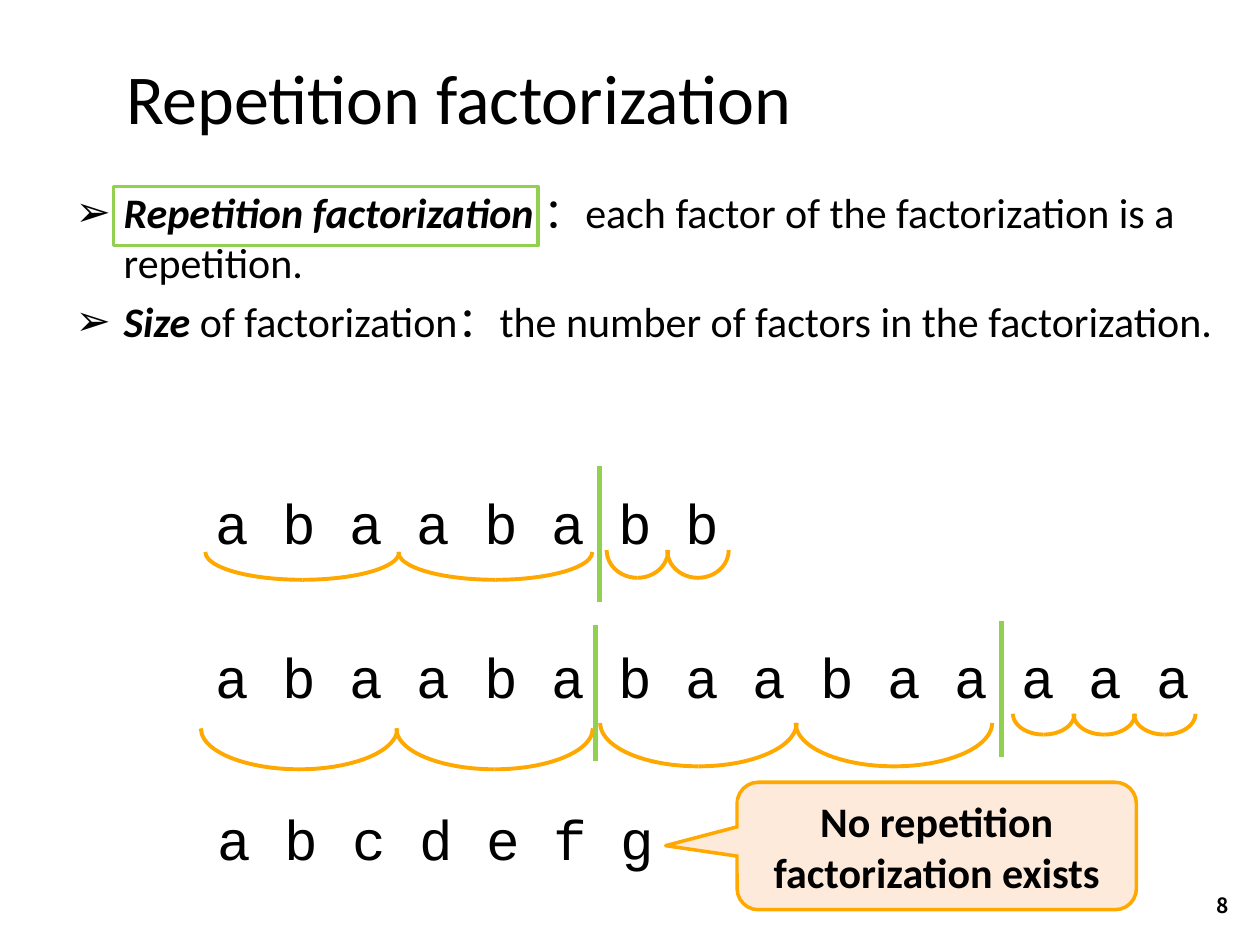
from collections import namedtuple

from lxml.etree import SubElement
from pptx import Presentation
from pptx.dml.color import RGBColor
from pptx.enum.shapes import MSO_CONNECTOR as Connector, MSO_SHAPE as Shape
from pptx.enum.text import MSO_ANCHOR as Anchor, MSO_AUTO_SIZE as AutoSize, PP_ALIGN as Align
from pptx.oxml.ns import qn
from pptx.util import Cm, Pt

COLORS = {"text": "000000", "cut": "92D050", "arc": "FFA900", "callout": "FDEADA"}
Box = namedtuple("Box", "left top width height")


def color(key):
    """Return the palette colour with the given key."""
    return RGBColor.from_string(COLORS[key])


def inside(box, left, top, width, height):
    """Return a box whose position is relative to another box."""
    return Box(box.left + left, box.top + top, width, height)


def place(shape, box):
    """Move and size a shape to a box in centimetres."""
    shape.left, shape.top, shape.width, shape.height = map(Cm, box)


def add_run(paragraph, text, size, font="Calibri", bold=False, italic=False):
    """Append a formatted run to a paragraph."""
    run = paragraph.add_run()
    run.text = text
    run.font.name, run.font.size = font, Pt(size)
    run.font.bold, run.font.italic = bold, italic
    run.font.color.rgb = color("text")


def add_form(shapes, kind, box, fill=None, line=None, weight=2):
    """Add a preset shape with an optional fill and outline."""
    form = shapes.add_shape(kind, *map(Cm, box))
    form.shadow.inherit = False
    if fill:
        form.fill.solid()
        form.fill.fore_color.rgb = color(fill)
    else:
        form.fill.background()
    if line:
        form.line.color.rgb = color(line)
        form.line.width = Pt(weight)
    else:
        form.line.fill.background()
    return form


def add_title(slide, box, text):
    """Fill the title placeholder."""
    title = slide.shapes.title
    place(title, box)
    title.text_frame.vertical_anchor = Anchor.MIDDLE
    heading = title.text_frame.paragraphs[0]
    heading.alignment = Align.LEFT
    add_run(heading, text, 40)


def add_definitions(slide, box, definitions):
    """Fill the body placeholder with terms and meanings and frame the first term."""
    body = slide.placeholders[1]
    place(body, box)
    frame = body.text_frame
    frame.auto_size = AutoSize.NONE
    for index, (term, meaning) in enumerate(definitions):
        item = frame.add_paragraph() if index else frame.paragraphs[0]
        properties = item._p.get_or_add_pPr()
        properties.set("marL", str(Cm(0.97)))
        properties.set("indent", str(-Cm(0.97)))
        SubElement(properties, qn("a:buChar"), char="➢")
        item.space_before = Pt(5 if index else 0)
        add_run(item, term, 24, bold=True, italic=True)
        add_run(item, meaning, 24)
    add_form(slide.shapes, Shape.RECTANGLE, inside(box, 1.02, 0.13, 8.56, 1.19), line="cut")


def add_cut(slide, left, top, length=2.74):
    """Draw a vertical line between two factor groups."""
    cut = slide.shapes.add_connector(
        Connector.STRAIGHT, Cm(left), Cm(top), Cm(left), Cm(top + length))
    cut.line.color.rgb = color("cut")
    cut.line.width = Pt(3)
    SubElement(cut._element.spPr, qn("a:effectLst"))


def add_arcs(slide, box, count):
    """Draw adjoining lower half ellipses, the first one filling the box."""
    group = slide.shapes.add_group_shape()
    for index in range(count):
        center_x = box.left + box.width / 2 + index * (box.width - 0.02)
        center_y = box.top + box.height / 2
        upright = Box(center_x - box.height / 2, center_y - box.width / 2,
                      box.height, box.width)
        for flipped in (False, True):
            arc = add_form(group.shapes, Shape.ARC, upright, line="arc", weight=2.25)
            arc.rotation = 90
            if flipped:
                arc._element.spPr.xfrm.set("flipV", "1")


def add_string(slide, box, letters, cuts=(), arcs=()):
    """Write a string with its cuts and repetition arcs."""
    string = slide.shapes.add_textbox(*map(Cm, box))
    string.text_frame.word_wrap = True
    string.text_frame.auto_size = AutoSize.SHAPE_TO_FIT_TEXT
    add_run(string.text_frame.paragraphs[0], letters, 32, "Courier New")
    for left, top in cuts:
        add_cut(slide, box.left + left, box.top + top)
    for *area, count in arcs:
        add_arcs(slide, inside(box, *area), count)


def add_callout(slide, box, text):
    """Draw a rounded callout with a pointer to its left."""
    bubble = add_form(slide.shapes, Shape.ROUNDED_RECTANGLE, box, "callout", "arc")
    bubble.text_frame.word_wrap = True
    bubble.text_frame.vertical_anchor = Anchor.MIDDLE
    message = bubble.text_frame.paragraphs[0]
    message.alignment = Align.CENTER
    add_run(message, text, 24, bold=True)
    pointer = add_form(slide.shapes, Shape.ISOSCELES_TRIANGLE,
                       inside(box, -0.89, 0.18, 0.76, 1.83), "callout", "arc")
    pointer.adjustments[0] = 0.17
    pointer.rotation = 274.3
    add_form(slide.shapes, Shape.RECTANGLE, inside(box, 0.03, 0.36, 0.51, 1.47), "callout")


def add_page_number(slide, box, number):
    """Write the page number."""
    page = slide.shapes.add_textbox(*map(Cm, box))
    page.text_frame.word_wrap = True
    page.text_frame.vertical_anchor = Anchor.MIDDLE
    page.text_frame.paragraphs[0].alignment = Align.RIGHT
    add_run(page.text_frame.paragraphs[0], number, 12, "Noto Sans CJK JP", bold=True)


def main():
    """Build and save the slide."""
    deck = Presentation()
    deck.slide_width, deck.slide_height = Cm(25.4), Cm(19.05)
    slide = deck.slides.add_slide(deck.slide_layouts[1])
    add_title(slide, Box(2.29, 0.76, 21.84, 2.36), "Repetition factorization")
    add_definitions(slide, Box(1.27, 3.63, 23.75, 5.61), [
        ("Repetition factorization ", "：each factor of the factorization is a repetition."),
        ("Size ", "of factorization：the number of factors in the factorization."),
    ])
    add_string(slide, Box(4.09, 9.73, 13.49, 1.63), "a b a a b a b b",
               cuts=[(8, -0.33)],
               arcs=[(0.05, 0.84, 3.91, 1.12, 2), (8.14, 0.8, 1.24, 1.12, 2)])
    add_string(slide, Box(4.09, 12.83, 22.23, 1.63), "a b a a b a b a a b a a a a a",
               cuts=[(7.92, -0.23), (16.1, -0.31)],
               arcs=[(-0.04, 1.03, 3.96, 1.65, 2), (8.01, 0.87, 3.96, 1.75, 2),
                     (16.33, 1.14, 1.24, 0.84, 3)])
    add_string(slide, Box(4.14, 16.1, 13.69, 1.63), "a b c d e f g")
    add_callout(slide, Box(14.86, 15.77, 8.05, 2.57), "No repetition factorization exists")
    add_page_number(slide, Box(23.29, 17.73, 1.73, 1.02), "8")
    deck.save("out.pptx")


if __name__ == "__main__":
    main()
